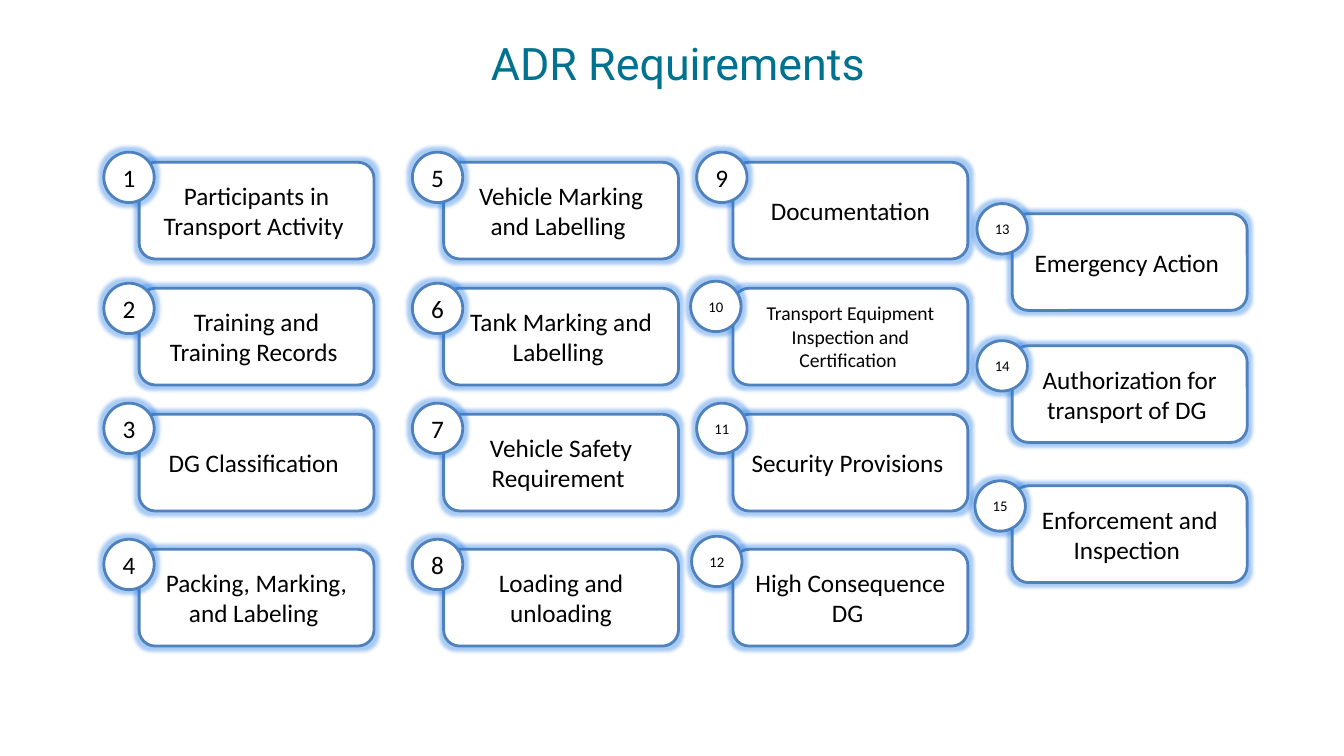
from lxml.etree import SubElement
from pptx import Presentation
from pptx.dml.color import RGBColor
from pptx.enum.shapes import MSO_SHAPE
from pptx.enum.text import MSO_ANCHOR, MSO_AUTO_SIZE, PP_ALIGN
from pptx.oxml.ns import qn
from pptx.util import Inches, Pt

TITLE = "ADR Requirements "
COLORS = {"title": "00728F", "line": "4F81BD", "fill": "FFFFFF", "text": "000000"}
ROWS = [1.61, 2.86, 4.11, 5.45]
DOTS = [1.51, 2.81, 4, 5.35]
COLUMNS = [
    {"left": 1.38, "tops": ROWS, "dots": list(zip([1.03] * 4, DOTS)),
     "labels": ["Participants in Transport Activity ", "Training and Training Records ",
                "DG Classification ", "Packing, Marking, and Labeling "]},
    {"left": 4.4, "tops": ROWS, "dots": list(zip([4.09] * 4, DOTS)),
     "labels": ["Vehicle Marking and Labelling ", "Tank Marking and Labelling ",
                "Vehicle Safety Requirement ", "Loading and unloading"]},
    {"left": 7.27, "tops": ROWS,
     "dots": [(6.91, 1.51), (6.85, 2.79), (6.91, 4), (6.86, 5.32)],
     "labels": ["Documentation", "Transport Equipment Inspection and Certification ",
                "Security Provisions ", "High Consequence DG "]},
    {"left": 10.04, "tops": [2.12, 3.43, 4.82],
     "dots": [(9.69, 2.02), (9.69, 3.38), (9.67, 4.77)],
     "labels": ["Emergency Action ", "Authorization for transport of DG ",
                "Enforcement and Inspection "]},
]
CARD = (2.33, 0.96)
DOT = (0.5, 0.5)
LONG = 40


def tint(name):
    return RGBColor.from_string(COLORS[name])


def write(shape, text, size, face, color):
    frame = shape.text_frame
    frame.text = text
    frame.word_wrap = True
    para = frame.paragraphs[0]
    para.alignment = PP_ALIGN.CENTER
    font = para.runs[0].font
    font.size = Pt(size)
    font.name = face
    font.color.rgb = tint(color)
    return frame


def add_glow(shape):
    shape.shadow.inherit = False
    effects = shape._element.spPr.find(qn("a:effectLst"))
    glow = SubElement(effects, qn("a:glow"), rad=str(Pt(5)))
    color = SubElement(glow, qn("a:srgbClr"), val=COLORS["line"])
    SubElement(color, qn("a:satMod"), val="175000")
    SubElement(color, qn("a:alpha"), val="40000")


def add_part(slide, kind, place, extent, text, size):
    shape = slide.shapes.add_shape(kind, *map(Inches, place + extent))
    shape.fill.solid()
    shape.fill.fore_color.rgb = tint("fill")
    shape.line.color.rgb = tint("line")
    shape.line.width = Pt(2)
    add_glow(shape)
    frame = write(shape, text, size, "Calibri", "text")
    frame.vertical_anchor = MSO_ANCHOR.MIDDLE


def main():
    deck = Presentation()
    deck.slide_width, deck.slide_height = Inches(13.33), Inches(7.5)
    slide = deck.slides.add_slide(deck.slide_layouts[5])

    title = slide.shapes.title
    title.left, title.top = Inches(0.78), Inches(0.3)
    title.width, title.height = Inches(12), Inches(0.97)
    frame = write(title, TITLE, 32, "Roboto", "title")
    frame.vertical_anchor = MSO_ANCHOR.TOP
    frame.auto_size = MSO_AUTO_SIZE.NONE

    for column in COLUMNS:
        for top, label in zip(column["tops"], column["labels"]):
            size = 14 if len(label) > LONG else 18
            add_part(slide, MSO_SHAPE.ROUNDED_RECTANGLE, (column["left"], top),
                     CARD, label, size)

    places = [place for column in COLUMNS for place in column["dots"]]
    for number, place in enumerate(places, 1):
        size = 18 if number < 10 else 10.5
        add_part(slide, MSO_SHAPE.OVAL, place, DOT, str(number), size)

    deck.save("out.pptx")


if __name__ == "__main__":
    main()
